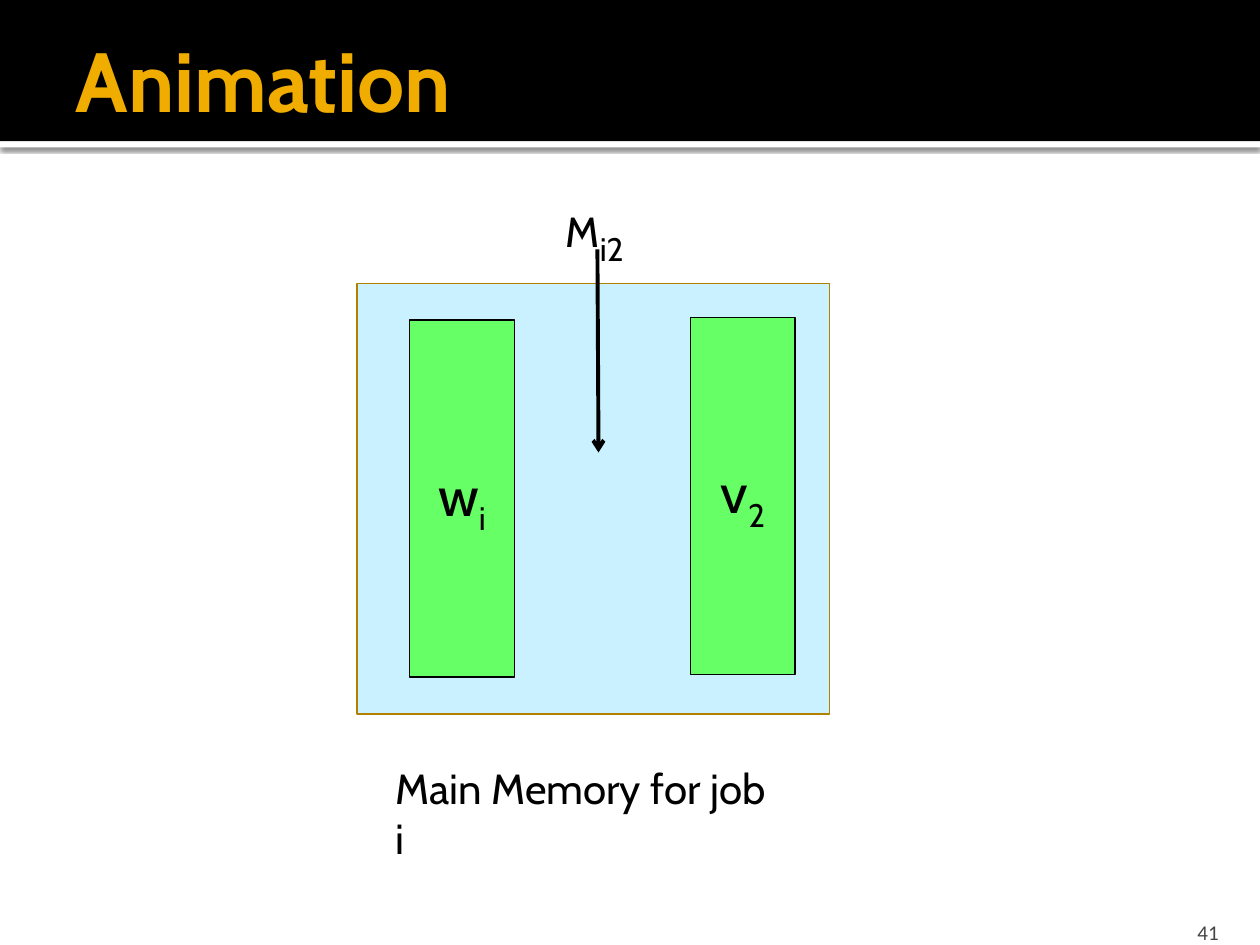
from lxml.etree import SubElement
from pptx import Presentation
from pptx.dml.color import RGBColor
from pptx.enum.shapes import MSO_CONNECTOR, MSO_SHAPE
from pptx.enum.text import MSO_ANCHOR, PP_ALIGN
from pptx.oxml import parse_xml
from pptx.oxml.ns import nsdecls, qn
from pptx.util import Inches, Pt


def write(holder, text, subscript="", size=24, sub_size=None, color="000000",
          font="Cabin", bold=False, align=PP_ALIGN.LEFT, anchor=MSO_ANCHOR.TOP):
    frame = holder.text_frame
    frame.word_wrap = True
    frame.vertical_anchor = anchor
    paragraph = frame.paragraphs[0]
    paragraph.alignment = align
    for part, points, baseline in ((text, size, None), (subscript, sub_size or size, "-25000")):
        if part:
            run = paragraph.add_run()
            run.text = part
            run.font.size = Pt(points)
            run.font.name = font
            run.font.bold = bold
            run.font.color.rgb = RGBColor.from_string(color)
            if baseline:
                run.font._element.set("baseline", baseline)


def rectangle(left, top, width, height, fill, outline=None):
    block = slide.shapes.add_shape(MSO_SHAPE.RECTANGLE, *(int(n * unit) for n in (left, top, width, height)))
    block.shadow.inherit = False
    block.fill.solid()
    block.fill.fore_color.rgb = RGBColor.from_string(fill)
    if outline:
        block.line.color.rgb = RGBColor.from_string(outline)
        block.line.width = Pt(1)
    else:
        block.line.fill.background()
    return block


deck = Presentation()
deck.slide_width, deck.slide_height = Inches(10), Inches(7.5)
unit = deck.slide_width / 120
slide = deck.slides.add_slide(deck.slide_layouts[5])

strip = rectangle(0, 13.45, 120, 0.6, "FFFFFF")
strip_effects = strip._element.spPr.find(qn("a:effectLst"))
strip_effects.append(parse_xml(
    f'<a:outerShdw {nsdecls("a")} blurRad="31750" dist="10160" dir="5400000" rotWithShape="0">'
    '<a:srgbClr val="000000"><a:alpha val="60000"/></a:srgbClr></a:outerShdw>'))
rectangle(0, 0, 120, 13.45, "000000")

title = slide.shapes.title
title.left, title.top, title.width, title.height = (int(n * unit) for n in (6, 2, 114, 11))
title.text_frame.margin_right = Inches(0.05)
write(title, "Animation", size=48, color="F0AD00", bold=True, anchor=MSO_ANCHOR.MIDDLE)
slide.shapes._spTree.append(title._element)

rectangle(34, 27, 45, 41, "C9F1FF", "B28000")

for left, top, vector, index in ((39, 30.5, "w", "i"), (65.75, 30.25, "v", "2")):
    stripe = rectangle(left, top, 10, 34, "66FF66", "000000")
    write(stripe, vector, index, size=32, align=PP_ALIGN.CENTER, anchor=MSO_ANCHOR.MIDDLE)

labels = (
    ((36.5, 72, 39.1, 6), "Main Memory for job i", {}),
    ((52.7, 17.65, 8.4, 6), "M", {"subscript": "i2", "sub_size": 32}),
    ((107.65, 86.4, 9.6, 3.6), "41", {"size": 12, "font": "Calibri", "color": "454545",
                                      "align": PP_ALIGN.RIGHT, "anchor": MSO_ANCHOR.BOTTOM}),
)
for area, text, style in labels:
    label = slide.shapes.add_textbox(*(int(n * unit) for n in area))
    write(label, text, **style)
label.text_frame.margin_bottom = 0

arrow = slide.shapes.add_connector(MSO_CONNECTOR.STRAIGHT, *(int(n * unit) for n in (56.9, 23.75, 57, 43.1)))
arrow.line.color.rgb = RGBColor.from_string("000000")
arrow.line.width = Pt(2.25)
SubElement(arrow.line._get_or_add_ln(), qn("a:tailEnd"), type="arrow")
SubElement(arrow._element.spPr, qn("a:effectLst"))

deck.save("out.pptx")
